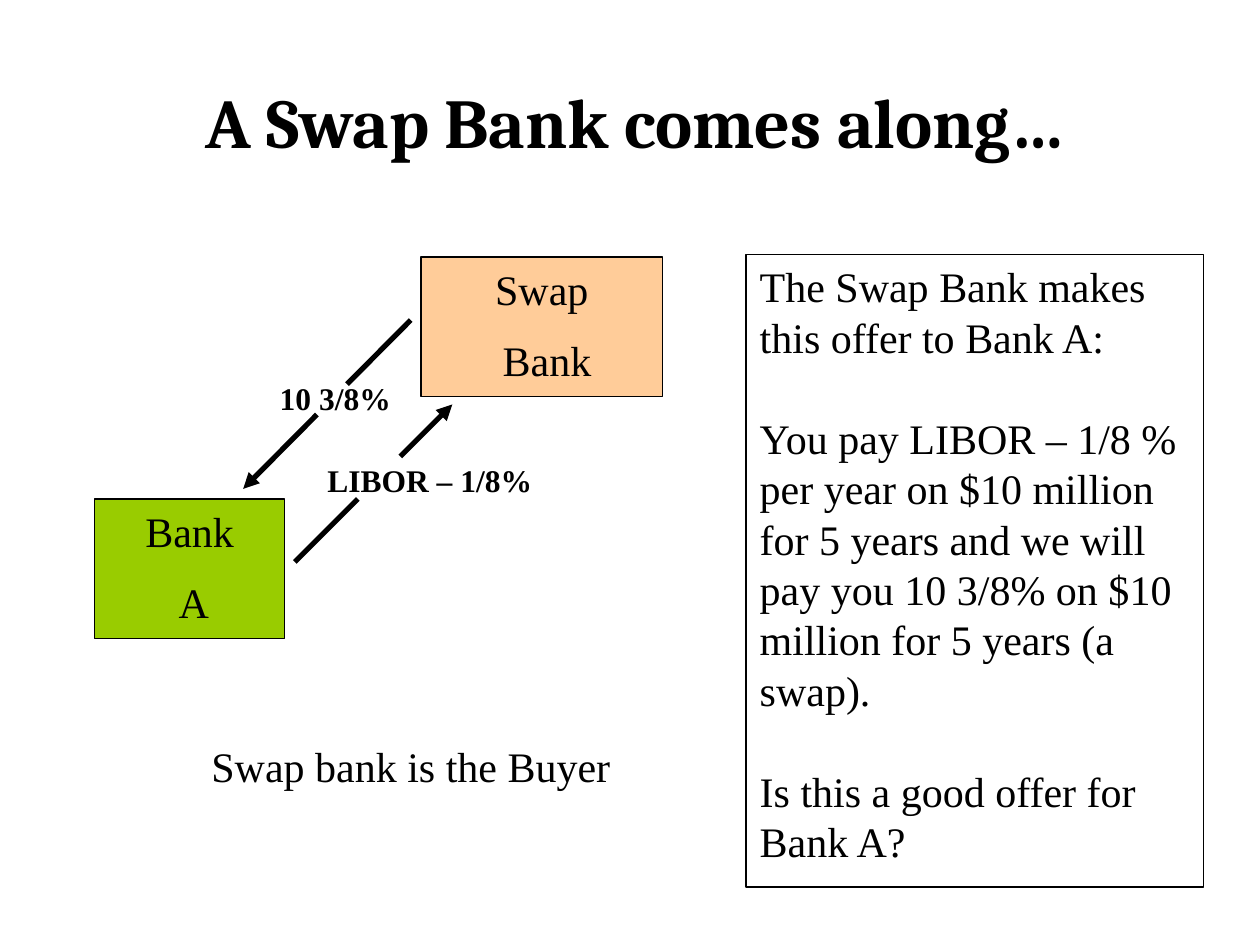
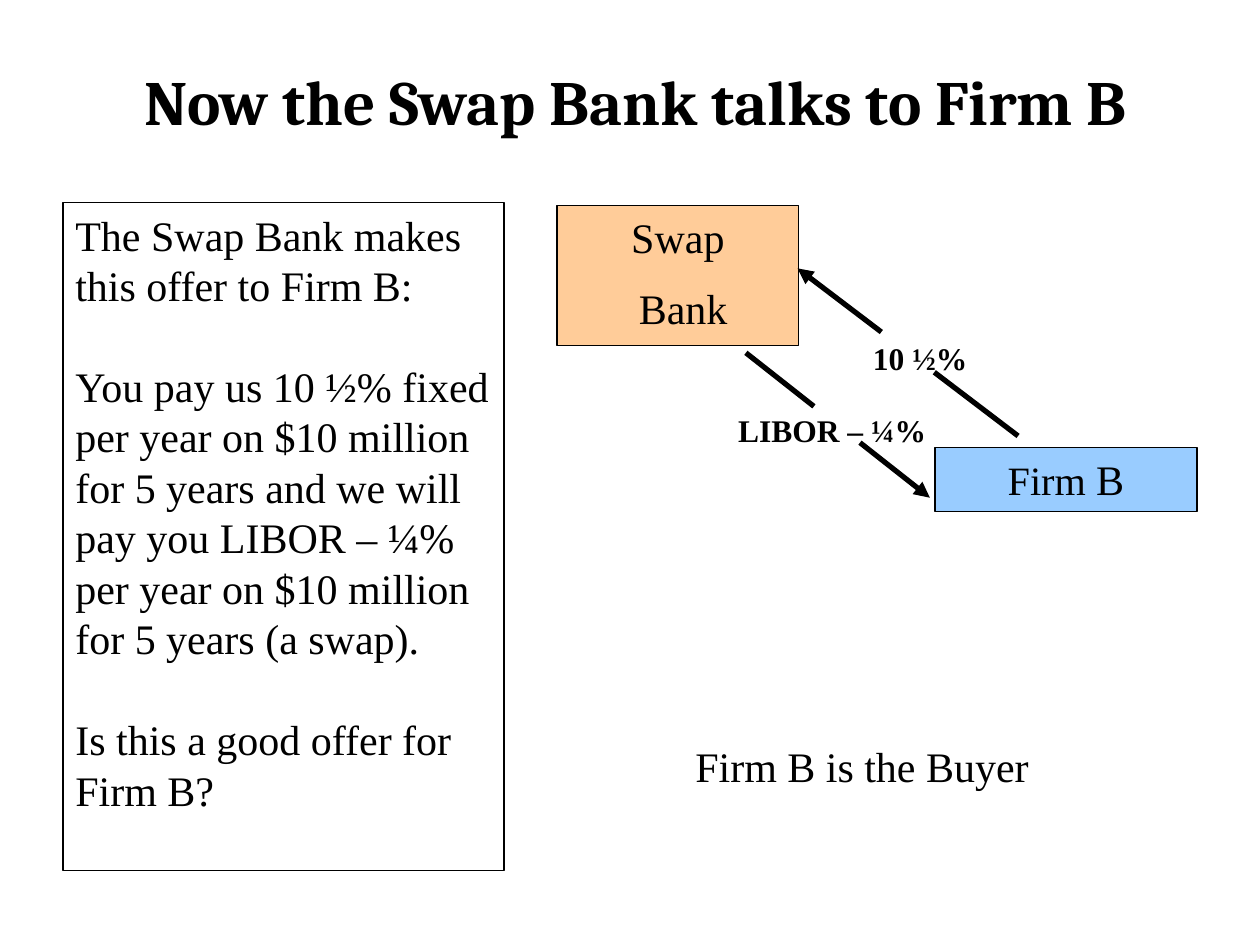
from lxml import etree
from pptx import Presentation
from pptx.dml.color import RGBColor
from pptx.enum.shapes import MSO_CONNECTOR, MSO_SHAPE
from pptx.enum.text import MSO_ANCHOR, PP_ALIGN
from pptx.oxml.ns import qn
from pptx.util import Inches, Pt

LEFT, CENTER, RIGHT = PP_ALIGN.LEFT, PP_ALIGN.CENTER, PP_ALIGN.RIGHT
TOP, MIDDLE = MSO_ANCHOR.TOP, MSO_ANCHOR.MIDDLE
RECT, STRAIGHT = MSO_SHAPE.RECTANGLE, MSO_CONNECTOR.STRAIGHT

# Shared style
BLACK, ORANGE, GREEN, BLUE = "000000", "FFCC99", "99CC00", "99CCFF"
TITLE_FONT, BODY_FONT = "Cambria", "Times New Roman"
BODY, LABEL = 24, 18
PARTY_GAP, OFFER_GAP = 12, 29
PARTY_H, LABEL_H, NOTE_W, NOTE_H = 1.11, 0.4, 3.5, 0.51
TITLE_X, TITLE_W, TITLE_H, NOTE_Y = 0.67, 8.75, 1.25, 5.83

# Content: a paragraph is a string, or a list of (text, size) runs.
# A payment runs from payer to receiver, with a gap (shares of its length)
# left open for its label.
SWAP_BANK = ["Swap", " Bank"]
SLIDES = [
    {
        "title": ("A Swap Bank comes along…", 0.33, 40),
        "parties": [
            (SWAP_BANK, ORANGE, (3.34, 2.04, 1.92, PARTY_H)),
            (["Bank", " A"], GREEN, (0.75, 3.96, 1.51, PARTY_H)),
        ],
        "payments": [
            ("10 3/8%", RIGHT, (2.09, 2.96, 1.11), (3.26, 2.54), (1.93, 3.88), (0.38, 0.56)),
            ("LIBOR – 1/8%", LEFT, (2.5, 3.61, 2.01), (2.34, 4.46), (3.59, 3.21), (0.4, 0.67)),
        ],
        "offer": ([
            "The Swap Bank makes this offer to Bank A:",
            "You pay LIBOR – 1/8 % per year on $10 million for 5 years and we will "
            "pay you 10 3/8% on $10 million for 5 years (a swap).",
            "Is this a good offer for Bank A?",
        ], (5.92, 2.02, 3.63, 5.02), 0.11),
        "note": ("Swap bank is the Buyer", 1.58),
    },
    {
        "title": ("Now the Swap Bank talks to Firm B", 0.17, 36),
        "parties": [
            (SWAP_BANK, ORANGE, (4.42, 1.63, 1.92, PARTY_H)),
            ([[("Firm ", 23), ("B", 24)]], BLUE, (7.42, 3.55, 2.08, 0.51)),
        ],
        "payments": [
            ("10 ½%", LEFT, (6.83, 2.64, 1.08), (8.08, 3.46), (6.33, 2.13), (0.38, 0.62)),
            ("LIBOR – ¼%", RIGHT, (5.58, 3.21, 1.87), (5.92, 2.8), (7.38, 3.95), (0.37, 0.62)),
        ],
        "offer": ([
            "The Swap Bank makes this offer to Firm B:",
            "You pay us 10 ½% fixed per year on $10 million for 5 years and we will "
            "pay you LIBOR – ¼% per year on $10 million for 5 years (a swap).",
            "Is this a good offer for Firm B?",
        ], (0.5, 1.61, 3.5, 5.3), 0.1),
        "note": ("Firm B is the Buyer", 5.42),
    },
]


def rgb(value):
    return RGBColor.from_string(value)


def write(sp, paragraphs, size=BODY, align=LEFT, font=BODY_FONT, bold=False,
          gap=0, anchor=TOP, inset=0.1):
    tf = sp.text_frame
    tf.word_wrap = True
    tf.vertical_anchor = anchor
    tf.margin_left = tf.margin_right = Inches(inset)
    tf.margin_top = tf.margin_bottom = Inches(0.05)
    for i, runs in enumerate(paragraphs):
        p = tf.add_paragraph() if i else tf.paragraphs[0]
        p.alignment = align
        if i:
            p.space_before = Pt(gap)
        for text, run_size in [(runs, size)] if isinstance(runs, str) else runs:
            r = p.add_run()
            r.text = text
            r.font.name, r.font.size, r.font.bold = font, Pt(run_size), bold
            r.font.color.rgb = rgb(BLACK)


def add_text(s, box, text, **style):
    write(s.shapes.add_textbox(*map(Inches, box)), [text], **style)


def add_box(s, box, paragraphs, fill=None, **style):
    sp = s.shapes.add_shape(RECT, *map(Inches, box))
    sp.shadow.inherit = False
    if fill:
        sp.fill.solid()
        sp.fill.fore_color.rgb = rgb(fill)
    else:
        sp.fill.background()
    sp.line.color.rgb = rgb(BLACK)
    sp.line.width = Pt(0.75)
    write(sp, paragraphs, **style)


def add_line(s, start, end, arrow=False):
    line = s.shapes.add_connector(STRAIGHT, *map(Inches, (*start, *end)))
    line.line.color.rgb = rgb(BLACK)
    line.line.width = Pt(3)
    if arrow:
        etree.SubElement(line.line._get_or_add_ln(), qn("a:tailEnd"), type="triangle")
    etree.SubElement(line._element.spPr, qn("a:effectLst"))


def add_payment(s, label, align, place, payer, receiver, gap):
    before, after = [
        tuple(a + share * (b - a) for a, b in zip(payer, receiver)) for share in gap
    ]
    add_line(s, payer, before)
    add_line(s, after, receiver, arrow=True)
    add_text(s, (*place, LABEL_H), label, size=LABEL, align=align, bold=True)


def main():
    prs = Presentation()
    prs.slide_width, prs.slide_height = Inches(10), Inches(7.5)
    for content in SLIDES:
        s = prs.slides.add_slide(prs.slide_layouts[6])
        # Title
        title, y, size = content["title"]
        add_text(s, (TITLE_X, y, TITLE_W, TITLE_H), title, size=size, align=CENTER,
                 font=TITLE_FONT, bold=True, anchor=MIDDLE)
        # Swap diagram
        for name, fill, box in content["parties"]:
            add_box(s, box, name, fill, align=CENTER, gap=PARTY_GAP)
        for payment in content["payments"]:
            add_payment(s, *payment)
        # Offer and note
        offer, box, inset = content["offer"]
        add_box(s, box, offer, gap=OFFER_GAP, inset=inset)
        note, x = content["note"]
        add_text(s, (x, NOTE_Y, NOTE_W, NOTE_H), note)
    prs.save("out.pptx")


if __name__ == "__main__":
    main()
